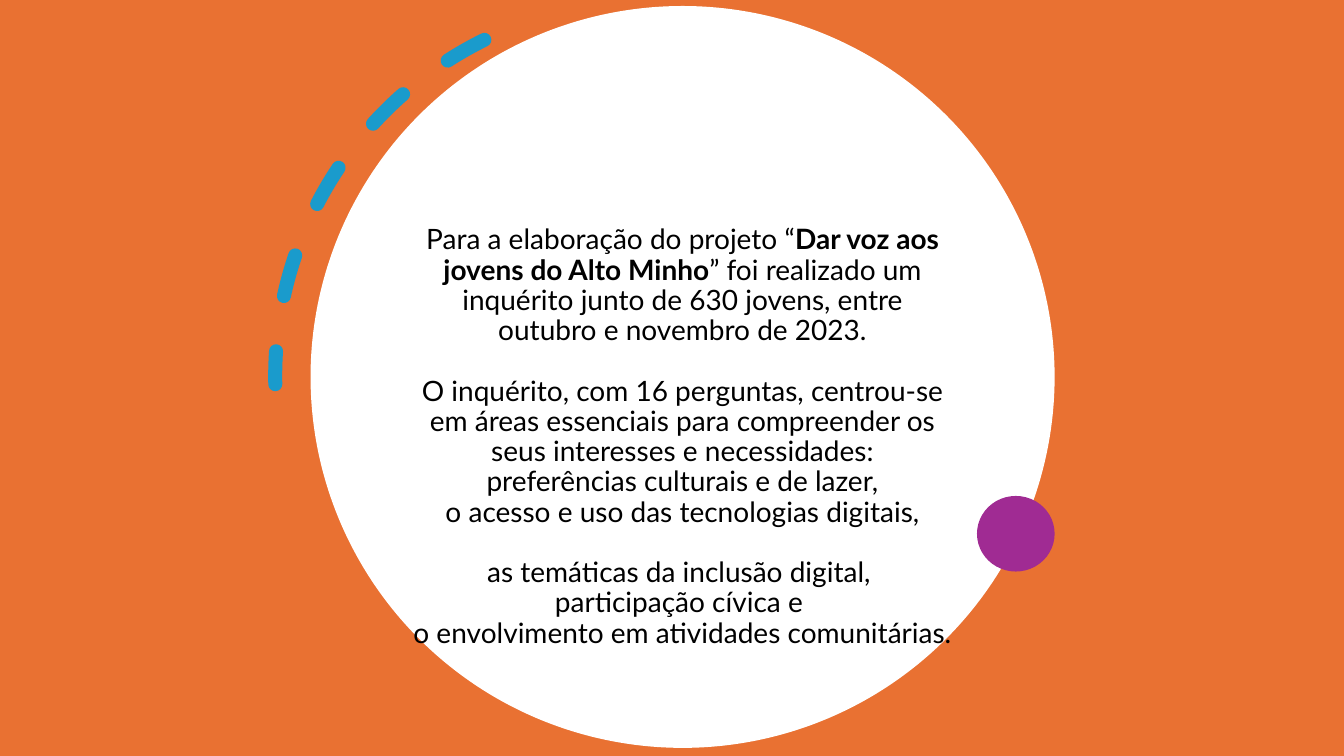
from dataclasses import dataclass

from lxml.etree import SubElement
from pptx import Presentation
from pptx.dml.color import RGBColor
from pptx.enum.dml import MSO_LINE
from pptx.enum.shapes import MSO_SHAPE
from pptx.enum.text import MSO_ANCHOR, MSO_AUTO_SIZE, PP_ALIGN
from pptx.oxml.ns import qn
from pptx.slide import Slide
from pptx.util import Inches, Pt

COLORS = {
    "orange": "E97132",
    "white": "FFFFFF",
    "blue": "0F9ED5",
    "purple": "A02B93",
    "black": "000000",
}
FONT = "Lato"
FONT_SIZE = Pt(20)
SECTION_GAP = Pt(21.6)


@dataclass(frozen=True)
class Area:
    kind: MSO_SHAPE
    left: float
    top: float
    width: float
    height: float
    color: str


@dataclass(frozen=True)
class Line:
    spans: tuple[str, ...]  # every second span is bold
    opens_section: bool = False


BACKDROP = Area(MSO_SHAPE.RECTANGLE, 0, 0, 13.33, 7.5, "orange")
DISC = Area(MSO_SHAPE.OVAL, 3.08, 0.06, 7.38, 7.36, "white")
DOT = Area(MSO_SHAPE.OVAL, 9.69, 4.92, 0.77, 0.75, "purple")

LINES = [
    Line((
        "Para a elaboração do projeto “",
        "Dar voz aos jovens do Alto Minho",
        "” foi realizado um inquérito junto de 630 jovens, entre outubro e novembro de 2023.",
    )),
    Line((
        "O inquérito, com 16 perguntas, centrou-se em áreas essenciais para "
        "compreender os seus interesses e necessidades:",
    ), opens_section=True),
    Line(("preferências culturais e de lazer,",)),
    Line(("o acesso e uso das tecnologias digitais,",)),
    Line(("as temáticas da inclusão digital, ",), opens_section=True),
    Line(("participação cívica e ",)),
    Line(("o envolvimento em atividades comunitárias.",)),
]


def rgb(name: str) -> RGBColor:
    return RGBColor.from_string(COLORS[name])


def draw_area(page: Slide, area: Area) -> None:
    shape = page.shapes.add_shape(
        area.kind, Inches(area.left), Inches(area.top), Inches(area.width), Inches(area.height)
    )
    shape.shadow.inherit = False
    shape.fill.solid()
    shape.fill.fore_color.rgb = rgb(area.color)
    shape.line.fill.background()


def draw_dashed_arc(page: Slide) -> None:
    arc = page.shapes.add_shape(
        MSO_SHAPE.ARC, Inches(2.73), Inches(0.01), Inches(7.45), Inches(7.45)
    )
    arc.shadow.inherit = False
    arc.adjustments[0] = 162
    arc.adjustments[1] = 200.93
    arc.rotation = 333.7
    arc.element.spPr.find(qn("a:xfrm")).set("flipH", "1")
    arc.fill.background()
    arc.line.color.rgb = rgb("blue")
    arc.line.width = Pt(10)
    arc.line.dash_style = MSO_LINE.DASH
    outline = arc.element.spPr.find(qn("a:ln"))
    outline.set("cap", "rnd")
    SubElement(outline.find(".//" + qn("a:srgbClr")), qn("a:alpha"), val="95000")


def write_title(page: Slide) -> None:
    title = page.shapes.title
    title.left, title.top = Inches(3.99), Inches(1.27)
    title.width, title.height = Inches(5.56), Inches(5.22)
    # Bring the title in front of the areas drawn so far.
    title.element.getparent().append(title.element)

    frame = title.text_frame
    frame.word_wrap = True
    frame.auto_size = MSO_AUTO_SIZE.NONE
    frame.vertical_anchor = MSO_ANCHOR.BOTTOM
    frame.margin_left = frame.margin_right = Inches(0.1)
    frame.margin_top = frame.margin_bottom = Inches(0.05)

    for number, line in enumerate(LINES):
        para = frame.add_paragraph() if number else frame.paragraphs[0]
        para.alignment = PP_ALIGN.CENTER
        para.line_spacing = 0.9
        para.space_before = SECTION_GAP if line.opens_section else Pt(0)
        for position, text in enumerate(line.spans):
            span = para.add_run()
            span.text = text
            span.font.name = FONT
            span.font.size = FONT_SIZE
            span.font.bold = position % 2 == 1
            span.font.color.rgb = rgb("black")


def main() -> None:
    deck = Presentation()
    deck.slide_width, deck.slide_height = Inches(13.33), Inches(7.5)
    page = deck.slides.add_slide(deck.slide_layouts.get_by_name("Title Only"))
    draw_area(page, BACKDROP)
    draw_area(page, DISC)
    write_title(page)
    draw_dashed_arc(page)
    draw_area(page, DOT)
    deck.save("out.pptx")


if __name__ == "__main__":
    main()
